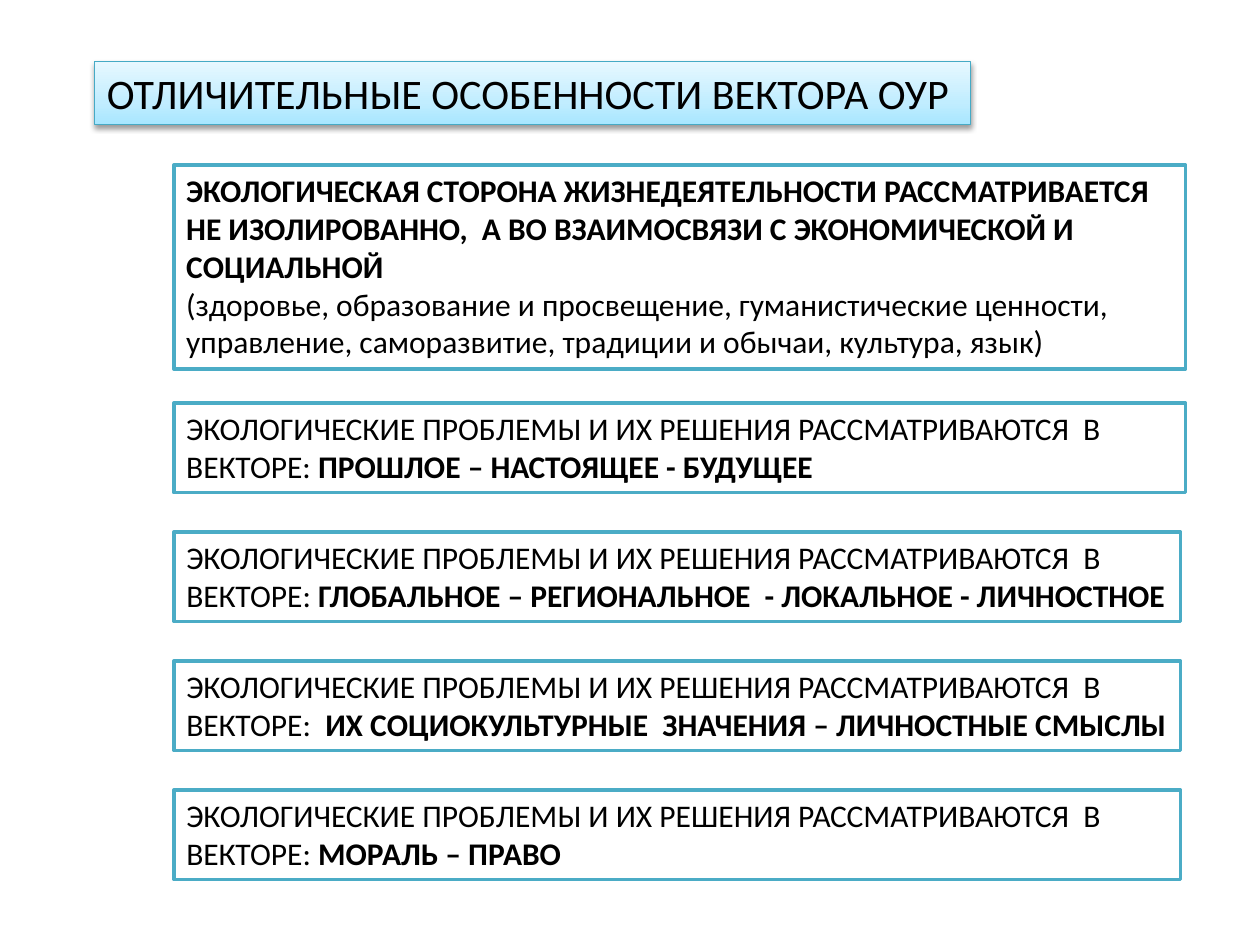
from pptx import Presentation
from pptx.dml.color import RGBColor
from pptx.enum.shapes import MSO_SHAPE
from pptx.enum.text import MSO_ANCHOR, MSO_AUTO_SIZE, PP_ALIGN
from pptx.oxml import parse_xml
from pptx.oxml.ns import nsdecls, qn
from pptx.util import Inches, Pt

RECTANGLE = MSO_SHAPE.RECTANGLE
TOP = MSO_ANCHOR.TOP
GROW = MSO_AUTO_SIZE.SHAPE_TO_FIT_TEXT
LEFT = PP_ALIGN.LEFT

FONT = "Calibri"
BLACK, WHITE, TEAL, TITLE_EDGE = "000000", "FFFFFF", "4BACC6", "46AAC5"
TITLE_STOPS = [(0, "A7E6FF"), (35, "C1EDFF"), (100, "E7F8FF")]

TITLE = "ОТЛИЧИТЕЛЬНЫЕ ОСОБЕННОСТИ ВЕКТОРА ОУР"
TITLE_BOX = (0.75, 0.49, 6.95, 0.5)
PRINCIPLE = [
    [("ЭКОЛОГИЧЕСКАЯ СТОРОНА ЖИЗНЕДЕЯТЕЛЬНОСТИ РАССМАТРИВАЕТСЯ", True)],
    [("НЕ ИЗОЛИРОВАННО,  А ВО ВЗАИМОСВЯЗИ С ЭКОНОМИЧЕСКОЙ И", True)],
    [("СОЦИАЛЬНОЙ", True)],
    [("(здоровье, образование и просвещение, гуманистические ценности,", False)],
    [("управление, саморазвитие, традиции и обычаи, культура, язык)", False)],
]
PRINCIPLE_BOX = (1.38, 1.31, 8.03, 1.62)
VECTOR_LEAD = "ЭКОЛОГИЧЕСКИЕ ПРОБЛЕМЫ И ИХ РЕШЕНИЯ РАССМАТРИВАЮТСЯ  В"
VECTORS = [
    ("ВЕКТОРЕ: ", "ПРОШЛОЕ – НАСТОЯЩЕЕ - БУДУЩЕЕ", 8.03),
    ("ВЕКТОРЕ: ", "ГЛОБАЛЬНОЕ – РЕГИОНАЛЬНОЕ  - ЛОКАЛЬНОЕ - ЛИЧНОСТНОЕ", 7.99),
    ("ВЕКТОРЕ:  ", "ИХ СОЦИОКУЛЬТУРНЫЕ  ЗНАЧЕНИЯ – ЛИЧНОСТНЫЕ СМЫСЛЫ", 7.99),
    ("ВЕКТОРЕ: ", "МОРАЛЬ – ПРАВО", 7.99),
]
VECTORS_BOX = (1.38, 3.2, 8.03, 3.78)
VECTOR_HEIGHT = 0.71


def color(hex_code):
    """Turn a hex string into a colour."""
    return RGBColor.from_string(hex_code)


def add_panel(slide, box, paragraphs, size, edge, edge_width):
    """Draw a white outlined panel holding paragraphs of (text, bold) runs."""
    panel = slide.shapes.add_shape(RECTANGLE, *map(Inches, box))
    panel.shadow.inherit = False
    panel.fill.solid()
    panel.fill.fore_color.rgb = color(WHITE)
    panel.line.color.rgb = color(edge)
    panel.line.width = Pt(edge_width)
    frame = panel.text_frame
    frame.word_wrap = True
    frame.auto_size = GROW
    frame.vertical_anchor = TOP
    for index, runs in enumerate(paragraphs):
        paragraph = frame.add_paragraph() if index else frame.paragraphs[0]
        paragraph.alignment = LEFT
        for text, bold in runs:
            run = paragraph.add_run()
            run.text = text
            run.font.name = FONT
            run.font.size = Pt(size)
            run.font.bold = bold
            run.font.color.rgb = color(BLACK)
    return panel


def add_title(slide, box):
    """Draw the heading with its upward gradient and soft shadow."""
    heading = add_panel(slide, box, [[(TITLE, False)]], 24, TITLE_EDGE, 0.75)
    properties = heading.element.spPr
    stops = "".join(
        f'<a:gs pos="{share * 1000}"><a:srgbClr val="{tint}"/></a:gs>'
        for share, tint in TITLE_STOPS
    )
    gradient = parse_xml(
        f'<a:gradFill {nsdecls("a")} rotWithShape="1"><a:gsLst>{stops}</a:gsLst>'
        '<a:lin ang="16200000" scaled="1"/></a:gradFill>'
    )
    properties.replace(properties.find(qn("a:solidFill")), gradient)
    properties.find(qn("a:effectLst")).append(parse_xml(
        f'<a:outerShdw {nsdecls("a")} blurRad="{Pt(3.1)}" dist="{Pt(1.6)}" '
        f'dir="5400000" rotWithShape="0"><a:srgbClr val="{BLACK}">'
        '<a:alpha val="38000"/></a:srgbClr></a:outerShdw>'
    ))


def add_principle(slide, box):
    """Draw the opening principle."""
    add_panel(slide, box, PRINCIPLE, 18, TEAL, 2)


def add_vectors(slide, box):
    """Stack the vector panels at equal steps down the box."""
    left, top, _, height = box
    step = (height - VECTOR_HEIGHT) / (len(VECTORS) - 1)
    for row, (label, vector, width) in enumerate(VECTORS):
        paragraphs = [[(VECTOR_LEAD, False)], [(label, False), (vector, True)]]
        place = (left, top + row * step, width, VECTOR_HEIGHT)
        add_panel(slide, place, paragraphs, 18, TEAL, 2)


def main():
    """Build and save the slide."""
    deck = Presentation()
    deck.slide_width, deck.slide_height = Inches(10), Inches(7.5)
    slide = deck.slides.add_slide(deck.slide_layouts[6])
    add_title(slide, TITLE_BOX)
    add_principle(slide, PRINCIPLE_BOX)
    add_vectors(slide, VECTORS_BOX)
    deck.save("out.pptx")


if __name__ == "__main__":
    main()
